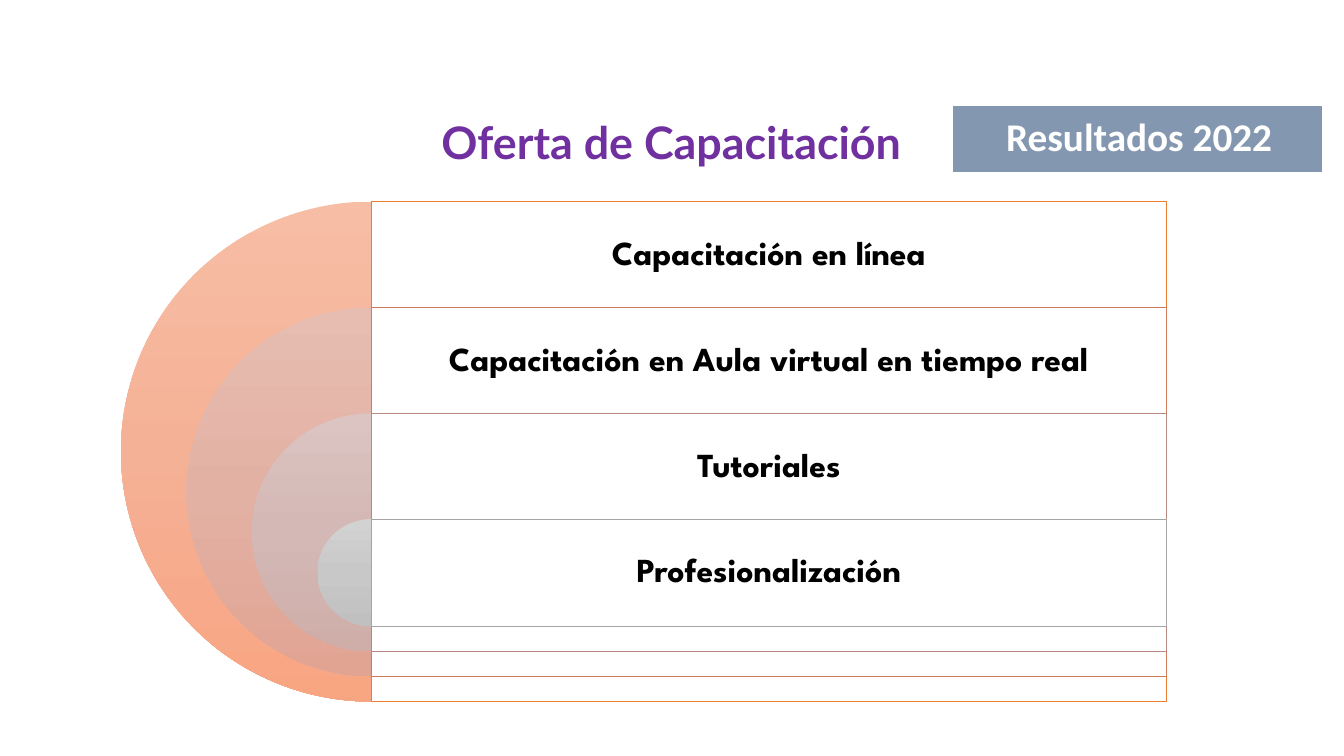
from copy import deepcopy
from dataclasses import dataclass

from lxml import etree
from pptx import Presentation
from pptx.dml.color import RGBColor
from pptx.enum.shapes import MSO_SHAPE
from pptx.enum.text import MSO_ANCHOR, MSO_AUTO_SIZE, PP_ALIGN
from pptx.oxml.ns import qn
from pptx.shapes.autoshape import Shape
from pptx.slide import Slide
from pptx.util import Inches, Pt

PIE, RECTANGLE = MSO_SHAPE.PIE, MSO_SHAPE.RECTANGLE
MIDDLE = MSO_ANCHOR.MIDDLE
NO_AUTOFIT = MSO_AUTO_SIZE.NONE
LEFT, CENTER = PP_ALIGN.LEFT, PP_ALIGN.CENTER

COLORS = {
    "white": "FFFFFF",
    "black": "000000",
    "purple": "7030A0",
    "slate": "8497B0",
}

AXIS_X = 3.68
FIRST_TOP = 2.0
ROW_HEIGHT = 1.05
OUTER_DIAMETER = 4.96
DIAMETER_STEP = 1.3
PANEL_WIDTH = 7.89


@dataclass(frozen=True)
class Offering:
    label: str
    gradient: tuple[str, str, str]
    outline: str


OFFERINGS = (
    Offering("Capacitación en línea", ("F7BDA5", "F5B196", "F8A582"), "ED7D31"),
    Offering("Capacitación en Aula virtual en tiempo real", ("E7BDB1", "E2B1A3", "E1A493"), "D17B5C"),
    Offering("Tutoriales", ("DBC4C1", "D3B8B5", "CFAEA9"), "B98A82"),
    Offering("Profesionalización", ("D2D2D2", "C8C8C8", "C0C0C0"), "A5A5A5"),
)


def write_text(holder: Shape, text: str, *, font: str, size: float, color: str,
               align: PP_ALIGN = CENTER, inset: float = 0.1, left_inset: float = 0.1) -> None:
    frame = holder.text_frame
    frame.word_wrap = True
    frame.auto_size = NO_AUTOFIT
    frame.vertical_anchor = MIDDLE
    frame.margin_left = Inches(left_inset)
    frame.margin_right = frame.margin_top = frame.margin_bottom = Inches(inset)
    paragraph = frame.paragraphs[0]
    paragraph.alignment = align
    paragraph.line_spacing = 0.9
    run = paragraph.add_run()
    run.text = text
    run.font.name = font
    run.font.size = Pt(size)
    run.font.bold = True
    run.font.color.rgb = RGBColor.from_string(color)


def add_rectangle(slide: Slide, left: float, top: float, width: float, height: float,
                  fill: str, outline: str, line_width: float) -> Shape:
    rectangle = slide.shapes.add_shape(
        RECTANGLE, Inches(left), Inches(top), Inches(width), Inches(height))
    rectangle.shadow.inherit = False
    rectangle.fill.solid()
    rectangle.fill.fore_color.rgb = RGBColor.from_string(fill)
    rectangle.line.color.rgb = RGBColor.from_string(outline)
    rectangle.line.width = Pt(line_width)
    return rectangle


def add_half_disc(slide: Slide, top: float, diameter: float, gradient: tuple[str, str, str]) -> None:
    disc = slide.shapes.add_shape(
        PIE, Inches(AXIS_X - diameter / 2), Inches(top), Inches(diameter), Inches(diameter))
    disc.shadow.inherit = False
    disc.adjustments[0] = 54
    disc.adjustments[1] = 162
    disc.line.fill.background()
    disc.fill.gradient()
    disc.fill.gradient_angle = 270
    stop_list = disc.fill._xPr.find(".//" + qn("a:gsLst"))
    stop_list.append(deepcopy(stop_list[0]))
    for stop, color, position in zip(disc.fill.gradient_stops, gradient, (0, 0.5, 1)):
        stop.color.rgb = RGBColor.from_string(color)
        stop.position = position


def add_offering(slide: Slide, index: int, offering: Offering) -> None:
    top = FIRST_TOP + index * ROW_HEIGHT
    diameter = OUTER_DIAMETER - index * DIAMETER_STEP
    add_half_disc(slide, top, diameter, offering.gradient)
    panel = add_rectangle(slide, AXIS_X, top, PANEL_WIDTH, diameter,
                          COLORS["white"], offering.outline, 0.5)
    panel_color = panel._element.spPr.find(qn("a:solidFill"))[0]
    etree.SubElement(panel_color, qn("a:alpha")).set("val", "90000")
    label = slide.shapes.add_textbox(
        Inches(AXIS_X), Inches(top), Inches(PANEL_WIDTH), Inches(ROW_HEIGHT))
    write_text(label, offering.label, font="League Spartan", size=24, color=COLORS["black"])


def main() -> None:
    presentation = Presentation()
    presentation.slide_width = Inches(13.33)
    presentation.slide_height = Inches(7.5)
    slide = presentation.slides.add_slide(presentation.slide_layouts[5])

    title = slide.shapes.title
    title.left, title.top = Inches(2.35), Inches(1.14)
    title.width, title.height = Inches(8.62), Inches(0.59)
    write_text(title, "Oferta de Capacitación", font="Lato", size=32,
               color=COLORS["purple"], inset=0.05, left_inset=0.05)

    for index, offering in enumerate(OFFERINGS):
        add_offering(slide, index, offering)

    banner = add_rectangle(slide, 9.45, 1.04, 3.67, 0.67, COLORS["slate"], COLORS["white"], 1)
    write_text(banner, "Resultados 2022", font="Calibri", size=28, color=COLORS["white"],
               align=LEFT, inset=0.08, left_inset=0.53)

    presentation.save("out.pptx")


if __name__ == "__main__":
    main()
